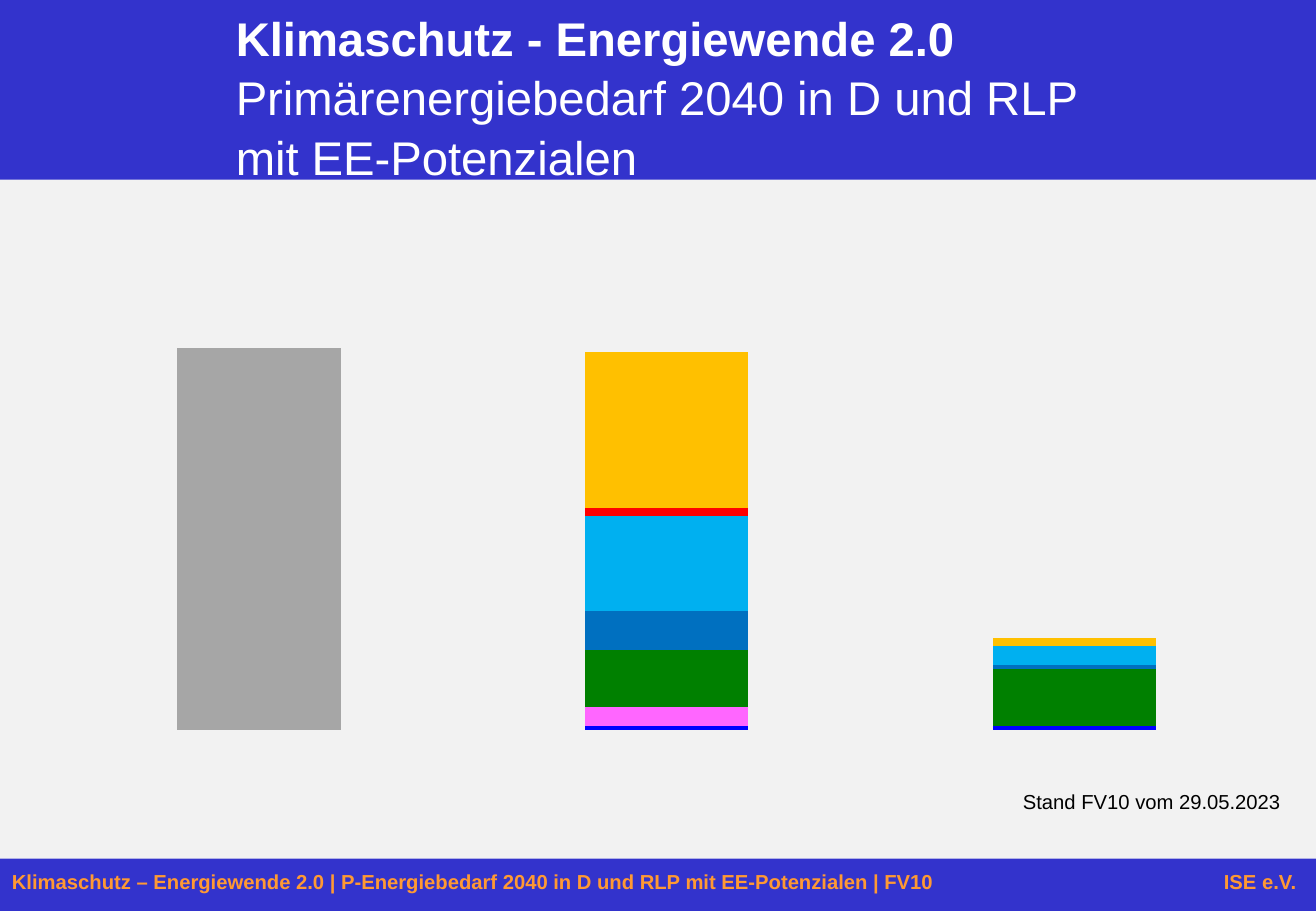
from lxml import etree
from pptx import Presentation
from pptx import util as u
from pptx.chart.data import CategoryChartData
from pptx.dml.color import RGBColor
from pptx.enum import chart as charts, shapes, text
from pptx.oxml import parse_xml
from pptx.oxml.ns import nsdecls, qn

PX = 9144  # 100 px to the inch
THEME = {
    "font": "Arial",
    "band": "3333CC", "panel": "F2F2F2", "title": "FFFFFF",
    "footer": "FF9933", "ink": "000000",
    "title_pt": 28, "small_pt": 12, "chart_pt": 10,
}
SOURCES = [  # colour and share of each layer, from the bottom up
    ("B2B2B2", (100, 1, 1)),
    ("FF66FF", (None, 5, 0)),
    ("008000", (None, 15, 15)),
    ("0070C0", (None, 10, 1)),
    ("00B0F0", (None, 25, 5)),
    ("FF0000", (None, 2, 0)),
    ("FFC000", (None, 41, 2)),
]
BASE_POINTS = ("A6A6A6", "0000FF", "0000FF")
PLOT = {"x": 0.016, "y": 0.049, "w": 0.984, "h": 0.916}


def style(font, size, color, bold=False):
    values = {"name": THEME["font"], "size": u.Pt(THEME[size]), "bold": bold}
    for name, value in values.items():
        setattr(font, name, value)
    font.color.rgb = RGBColor.from_string(THEME[color])


def paint(fill, color):
    fill.solid()
    fill.fore_color.rgb = RGBColor.from_string(color)


deck = Presentation()
deck.slide_width, deck.slide_height = 1083 * PX, 750 * PX
slide = deck.slides.add_slide(deck.slide_layouts[5])

# Background bands
for color, top, height in (("panel", 147, 560), ("band", -2, 150), ("band", 707, 43)):
    band = slide.shapes.add_shape(
        shapes.MSO_SHAPE.RECTANGLE, 0, top * PX, 1083 * PX, height * PX)
    band.shadow.inherit = False
    paint(band.fill, THEME[color])
    band.line.fill.background()

# Title, brought in front of its band
title = slide.shapes.title
slide.shapes._spTree.append(title._element)
for name, px in {"left": 184, "top": 0, "width": 901, "height": 151}.items():
    setattr(title, name, px * PX)
heading = title.text_frame
heading.auto_size = text.MSO_AUTO_SIZE.NONE
heading.vertical_anchor = text.MSO_ANCHOR.TOP
topic = heading.paragraphs[0]
for words, bold in (("Klimaschutz - Energiewende 2.0", True),
                    ("Primärenergiebedarf 2040 in D und RLP", False)):
    if topic.runs:
        topic.add_line_break()
    run = topic.add_run()
    run.text = words
    style(run.font, "title_pt", "title", bold)
potentials = heading.add_paragraph()
potentials.text = "mit EE-Potenzialen"
style(potentials.runs[0].font, "title_pt", "title")
for line in heading.paragraphs:
    line.alignment = text.PP_ALIGN.LEFT
    line.line_spacing = 1.05

# Stacked energy columns
data = CategoryChartData(number_format="0")
data.categories = ["1", "2", "3"]
for number, (color, shares) in enumerate(SOURCES, 1):
    data.add_series(f"Series {number}", shares)
energy = slide.shapes.add_chart(
    charts.XL_CHART_TYPE.COLUMN_STACKED,
    29 * PX, 187 * PX, 1023 * PX, 429 * PX, data).chart
style(energy.font, "chart_pt", "ink")
energy.has_legend = energy.has_title = False
energy.category_axis.visible = False
scale = {"visible": False, "has_major_gridlines": False,
         "minimum_scale": 0, "maximum_scale": 125}
for name, value in scale.items():
    setattr(energy.value_axis, name, value)

columns = energy.plots[0]
columns.gap_width, columns.overlap, columns.vary_by_categories = 150, 100, False
for layer, (color, shares) in zip(columns.series, SOURCES):
    paint(layer.format.fill, color)
for index, color in enumerate(BASE_POINTS):
    paint(columns.series[0].points[index].format.fill, color)

plot_area = energy._chartSpace.chart.plotArea
for old in plot_area.findall(qn("c:layout")):
    plot_area.remove(old)
layout = parse_xml(f'<c:layout {nsdecls("c")}><c:manualLayout/></c:layout>')
settings = {"layoutTarget": "inner", "xMode": "edge", "yMode": "edge", **PLOT}
for tag, value in settings.items():
    etree.SubElement(layout[0], qn(f"c:{tag}")).set("val", str(value))
plot_area.insert(0, layout)

# Footer and date
NOTES = [
    ("Klimaschutz – Energiewende 2.0 | P-Energiebedarf 2040 in D und RLP "
     "mit EE-Potenzialen | FV10\tISE e.V.", 0, 711, 1083, "footer", True),
    ("Stand FV10 vom 29.05.2023", 832, 645, 234, "ink", False),
]
for words, left, top, width, color, is_footer in NOTES:
    frame = slide.shapes.add_textbox(
        left * PX, top * PX, width * PX, 30 * PX).text_frame
    frame.word_wrap = is_footer
    note = frame.paragraphs[0]
    note.text = words
    if is_footer:
        tabs = etree.SubElement(note._p.get_or_add_pPr(), qn("a:tabLst"))
        etree.SubElement(tabs, qn("a:tab"), pos=str(1057 * PX), algn="r")
    style(note.runs[0].font, "small_pt", color, is_footer)

deck.save("out.pptx")
